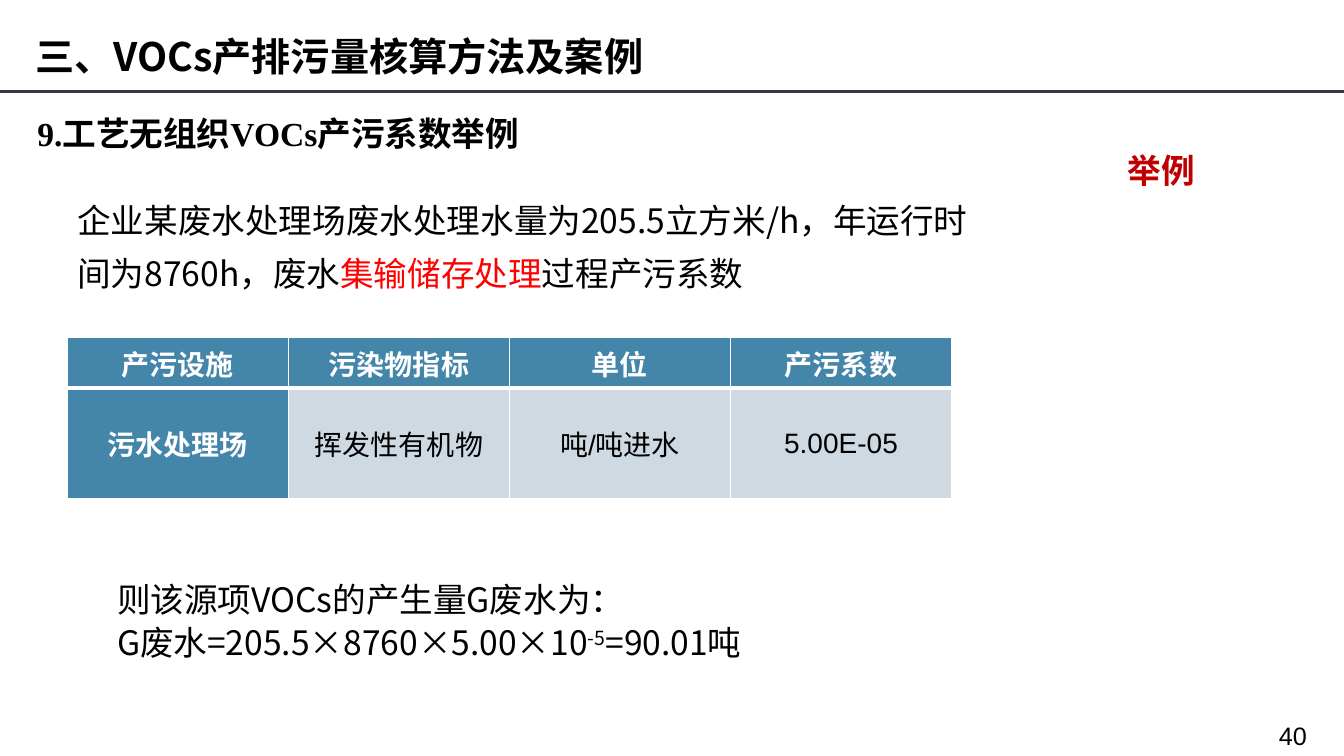
from lxml import etree
from pptx import Presentation
from pptx.dml.color import RGBColor
from pptx.enum.shapes import MSO_CONNECTOR
from pptx.enum.text import MSO_ANCHOR, MSO_AUTO_SIZE, PP_ALIGN
from pptx.oxml.ns import qn
from pptx.util import Cm, Pt

STRAIGHT = MSO_CONNECTOR.STRAIGHT
TOP, MIDDLE = MSO_ANCHOR.TOP, MSO_ANCHOR.MIDDLE
NO_FIT = MSO_AUTO_SIZE.NONE
LEFT, CENTER, JUSTIFY = PP_ALIGN.LEFT, PP_ALIGN.CENTER, PP_ALIGN.JUSTIFY

SANS, SERIF, ARIAL = "Noto Sans CJK SC", "Times New Roman", "Arial"
BLACK, WHITE, RED, DARK_RED = "000000", "FFFFFF", "FF0000", "C00000"
RULE, HEADER_FILL, VALUE_FILL = "353842", "4485AA", "CFD9E2"

FACTORS = [
    ["产污设施", "污染物指标", "单位", "产污系数"],
    ["污水处理场", "挥发性有机物", "吨/吨进水", "5.00E-05"],
]
ROW_HEIGHTS = [1.27, 2.79]
COLUMN_WIDTH = 5.57


def rgb(value):
    return RGBColor.from_string(value)


def style_run(run, size, face, color=BLACK, bold=False):
    run.font.size = Pt(size)
    run.font.name = face
    run.font.bold = bold
    run.font.color.rgb = rgb(color)
    east_asian = etree.SubElement(run.font._element, qn("a:ea"))
    east_asian.set("typeface", SANS)


def add_run(paragraph, text, *style):
    run = paragraph.add_run()
    run.text = text
    style_run(run, *style)
    return run


def place_text(slide, left, top, width, height, wrap=True):
    box = slide.shapes.add_textbox(Cm(left), Cm(top), Cm(width), Cm(height))
    box.text_frame.word_wrap = wrap
    return box.text_frame


def add_label(slide, box, text, *style, wrap=True):
    frame = place_text(slide, *box, wrap=wrap)
    add_run(frame.paragraphs[0], text, *style)


def add_title(slide):
    title = slide.shapes.title
    title.left, title.top = Cm(0.64), Cm(0.69)
    title.width, title.height = Cm(23.34), Cm(1.45)
    frame = title.text_frame
    frame.auto_size = NO_FIT
    frame.vertical_anchor = TOP
    paragraph = frame.paragraphs[0]
    paragraph.alignment = LEFT
    add_run(paragraph, "三、", 28, SERIF, BLACK, True)
    add_run(paragraph, "VOCs产排污量核算方法及案例", 28, SANS, BLACK, True)


def add_rule(slide, width):
    rule = slide.shapes.add_connector(STRAIGHT, width, Cm(2.31), 0, Cm(2.31))
    rule.line.color.rgb = rgb(RULE)
    rule.line.width = Pt(2.5)
    etree.SubElement(rule._element.spPr, qn("a:effectLst"))


def add_case(slide):
    paragraph = place_text(slide, 1.7, 4.62, 23.14, 2.92).paragraphs[0]
    paragraph.line_spacing = 1.3
    add_run(paragraph, "企业某废水处理场废水处理水量为205.5立方米/h，年运行时间为8760h，废水", 24, SANS)
    add_run(paragraph, "集输储存处理", 24, SANS, RED)
    add_run(paragraph, "过程产污系数", 24, SANS)


def add_result(slide):
    frame = place_text(slide, 1.7, 14.38, 19.63, 2.34)
    statement, formula = frame.paragraphs[0], frame.add_paragraph()
    for paragraph in (statement, formula):
        paragraph.alignment = JUSTIFY
        paragraph.line_spacing = Pt(31)
        properties = paragraph._p.get_or_add_pPr()
        properties.set("marL", "0")
        properties.set("indent", str(Cm(1)))
    add_run(statement, "则该源项VOCs的产生量G废水为：", 24, SANS)
    add_run(formula, "G废水=205.5×8760×5.00×10", 24, SANS)
    exponent = add_run(formula, "-5", 24, SANS)
    exponent.font._element.set("baseline", "30000")
    add_run(formula, "=90.01吨", 24, SANS)


def set_borders(cell, top, bottom):
    properties = cell._tc.get_or_add_tcPr()
    for side, points in (("L", 1), ("R", 1), ("T", top), ("B", bottom)):
        border = etree.SubElement(properties, qn(f"a:ln{side}"), w=str(Pt(points)))
        fill = etree.SubElement(border, qn("a:solidFill"))
        etree.SubElement(fill, qn("a:srgbClr"), val=WHITE)


def fill_cell(cell, text, is_top, is_heading):
    set_borders(cell, 1 if is_top else 3, 3 if is_top else 1)
    cell.fill.solid()
    cell.fill.fore_color.rgb = rgb(HEADER_FILL if is_heading else VALUE_FILL)
    cell.vertical_anchor = MIDDLE
    cell.margin_left = cell.margin_right = Cm(0.18)
    cell.margin_top = cell.margin_bottom = 0
    paragraph = cell.text_frame.paragraphs[0]
    paragraph.alignment = CENTER
    add_run(paragraph, text, 20, ARIAL, WHITE if is_heading else BLACK, is_heading)


def add_factor_table(slide):
    columns = len(FACTORS[0])
    table = slide.shapes.add_table(
        len(FACTORS), columns, Cm(1.7), Cm(8.51),
        Cm(COLUMN_WIDTH * columns), Cm(sum(ROW_HEIGHTS)),
    ).table
    for column in table.columns:
        column.width = Cm(COLUMN_WIDTH)
    for r, values in enumerate(FACTORS):
        table.rows[r].height = Cm(ROW_HEIGHTS[r])
        for c, value in enumerate(values):
            fill_cell(table.cell(r, c), value, r == 0, r == 0 or c == 0)


def main():
    deck = Presentation()
    deck.slide_width, deck.slide_height = Cm(33.87), Cm(19.05)
    slide = deck.slides.add_slide(deck.slide_layouts[5])
    add_label(slide, (31.98, 18.03, 1.9, 1.02), "40", 18, ARIAL)
    add_rule(slide, deck.slide_width)
    add_label(slide, (0.69, 2.72, 12.78, 1.27), "9.工艺无组织VOCs产污系数举例",
              24, SERIF, BLACK, True)
    add_title(slide)
    add_label(slide, (28.17, 3.66, 2.24, 1.27), "举例",
              24, SERIF, DARK_RED, True, wrap=False)
    add_case(slide)
    add_result(slide)
    add_factor_table(slide)
    deck.save("out.pptx")


if __name__ == "__main__":
    main()
